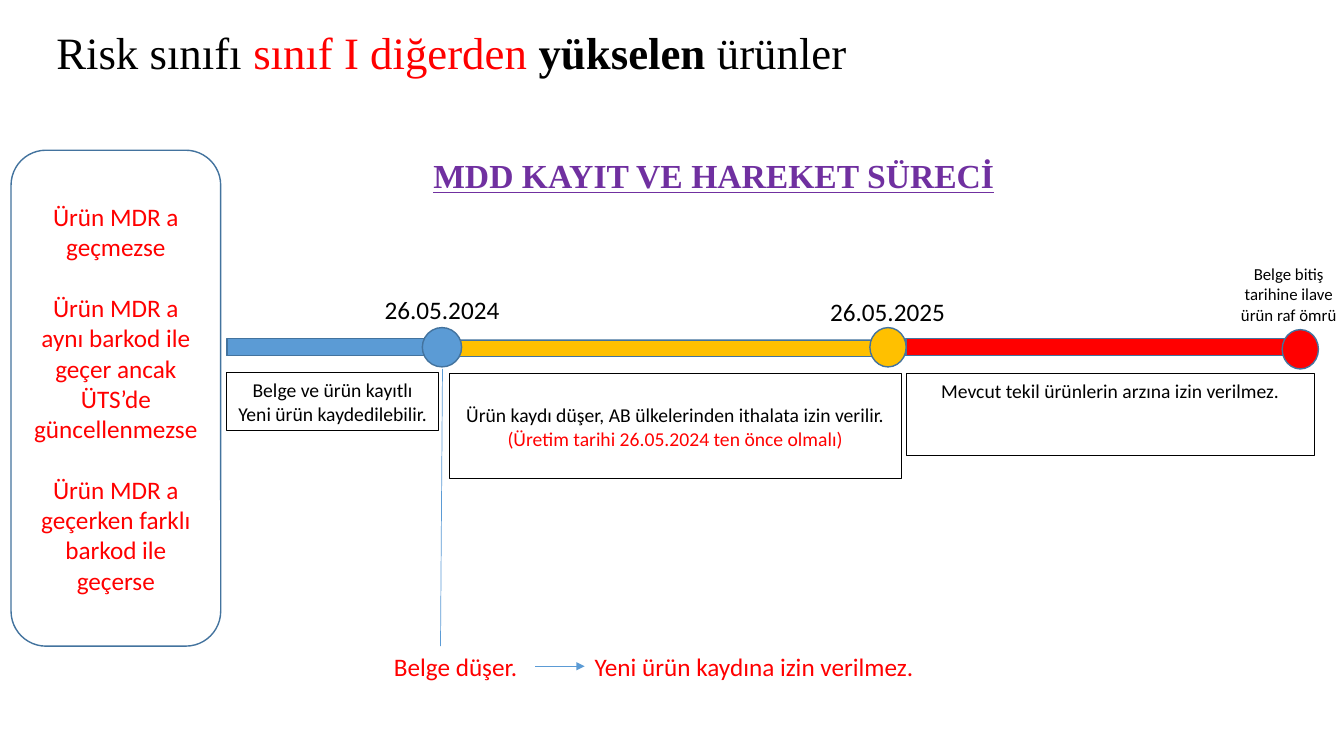
"""Builds the MDD registration timeline slide."""
from dataclasses import dataclass

from lxml import etree
from pptx import Presentation
from pptx import util as u
from pptx.dml.color import RGBColor
from pptx.enum import shapes, text
from pptx.oxml import ns


@dataclass(frozen=True)
class Theme:
    """Colours, fonts and type sizes of the slide."""
    white: str = "FFFFFF"
    black: str = "000000"
    red: str = "FF0000"
    blue: str = "5B9BD5"
    amber: str = "FFC000"
    purple: str = "7030A0"
    outline: str = "43739E"
    body_font: str = "Calibri"
    title_font: str = "Times New Roman"
    title: int = 32
    heading: int = 24
    body: int = 18
    box: int = 14
    note: int = 12


THEME = Theme()
COLUMNS, ROWS = 160, 90
CENTER, LEFT = text.PP_ALIGN.CENTER, text.PP_ALIGN.LEFT
TOP, MIDDLE = text.MSO_ANCHOR.TOP, text.MSO_ANCHOR.MIDDLE
KIND = shapes.MSO_SHAPE


def write(frame, paragraphs, size=THEME.body, color=THEME.black, font=THEME.body_font,
          align=CENTER, anchor=TOP, wrap=True, gap=0, spacing=None, bold=False, underline=False):
    """Fill a text frame; each paragraph is a string or a list of (text, changes) runs."""
    frame.word_wrap, frame.vertical_anchor = wrap, anchor
    for index, content in enumerate(paragraphs):
        paragraph = frame.add_paragraph() if index else frame.paragraphs[0]
        paragraph.alignment = align
        if spacing:
            paragraph.line_spacing = spacing
        if index and gap:
            paragraph.space_before = u.Pt(gap)
        for words, changes in [(content, {})] if isinstance(content, str) else content:
            run = paragraph.add_run()
            run.text = words
            run.font.size, run.font.name = u.Pt(size), font
            run.font.bold = changes.get("bold", bold)
            run.font.underline = underline
            run.font.color.rgb = RGBColor.from_string(changes.get("color", color))


class TimelineSlide:
    """Holds the theme, the grid and the current slide."""

    def __init__(self, deck, theme):
        """Add a blank slide and measure its grid."""
        self.theme = theme
        self.column, self.row = deck.slide_width / COLUMNS, deck.slide_height / ROWS
        self.slide = deck.slides.add_slide(deck.slide_layouts[6])

    def place(self, *lengths):
        """Turn alternating columns and rows into slide lengths."""
        return [round(n * (self.row if i % 2 else self.column)) for i, n in enumerate(lengths)]

    def shape(self, kind, at, fill=None, line=None, width=1):
        """Add a preset shape with a plain outline."""
        item = self.slide.shapes.add_shape(kind, *self.place(*at))
        item.shadow.inherit = False
        if fill:
            item.fill.solid()
            item.fill.fore_color.rgb = RGBColor.from_string(fill)
        else:
            item.fill.background()
        item.line.color.rgb = RGBColor.from_string(line or self.theme.outline)
        item.line.width = u.Pt(width)
        return item

    def label(self, at, *paragraphs, **style):
        """Add free-standing text."""
        item = self.slide.shapes.add_textbox(*self.place(*at))
        write(item.text_frame, paragraphs, **style)
        return item

    def box(self, at, *paragraphs, inset=0.05):
        """Add an outlined explanation box."""
        item = self.shape(KIND.RECTANGLE, at, line=self.theme.black, width=0.75)
        item.text_frame.margin_top = u.Inches(inset)
        write(item.text_frame, paragraphs, size=self.theme.box)

    def connector(self, ends, arrow=False):
        """Add a thin line, with an arrowhead if asked."""
        item = self.slide.shapes.add_connector(shapes.MSO_CONNECTOR.STRAIGHT, *self.place(*ends))
        item.line.color.rgb = RGBColor.from_string(self.theme.blue)
        item.line.width = u.Pt(0.5)
        if arrow:
            etree.SubElement(item.line._get_or_add_ln(), ns.qn("a:tailEnd"), type="triangle")
        etree.SubElement(item._element.spPr, ns.qn("a:effectLst"))
        return item


def main():
    """Build and save the slide."""
    deck = Presentation()
    deck.slide_width, deck.slide_height = u.Inches(13.33), u.Inches(7.5)
    page = TimelineSlide(deck, THEME)
    red = {"color": THEME.red}

    page.label((5.52, 1.56, 138, 10.08),
               [("Risk sınıfı ", {}), ("sınıf I diğerden ", red),
                ("yükselen ", {"bold": True}), ("ürünler", {})],
               size=THEME.title, font=THEME.title_font, align=LEFT, anchor=MIDDLE, spacing=0.9)
    page.label((50.4, 17.88, 69.84, 6), "MDD KAYIT VE HAREKET SÜRECİ",
               size=THEME.heading, font=THEME.title_font, color=THEME.purple,
               align=LEFT, wrap=False, bold=True, underline=True)

    conditions = page.shape(KIND.ROUNDED_RECTANGLE, (1.32, 17.88, 24.96, 59.04), THEME.white)
    write(conditions.text_frame,
          ["Ürün MDR a geçmezse",
           "Ürün MDR a aynı barkod ile geçer ancak ÜTS’de güncellenmezse",
           "Ürün MDR a geçerken farklı barkod ile geçerse"],
          color=THEME.red, anchor=MIDDLE, gap=22)

    page.shape(KIND.RIGHT_ARROW, (27, 39.6, 128.76, 3.6), THEME.white)
    stages = [
        (THEME.blue, (27, 40.32, 24.36, 2.04), (50.28, 39, 4.68, 4.68)),
        (THEME.amber, (54.24, 40.56, 50.88, 1.92), (103.56, 39, 4.32, 4.68)),
        (THEME.red, (107.88, 40.32, 48.6, 2.04), (152.64, 39.24, 4.32, 4.68)),
    ]
    for color, bar, _ in stages:
        page.shape(KIND.RECTANGLE, bar, color)
    for color, _, milestone in stages:
        page.shape(KIND.OVAL, milestone, color)

    page.label((39.72, 34.44, 25.8, 4.8), "26.05.2024")
    page.label((96.48, 34.68, 18.36, 4.8), "26.05.2025")
    page.label((145.8, 30.84, 15.24, 8.52), "Belge bitiş tarihine ilave ürün raf ömrü",
               size=THEME.note)

    page.box((27, 44.4, 25.2, 6.84), "Belge ve ürün kayıtlı", "Yeni ürün kaydedilebilir.")
    page.box((53.52, 44.52, 53.76, 12.48),
             "Ürün kaydı düşer, AB ülkelerinden ithalata izin verilir.",
             [("(Üretim tarihi 26.05.2024 ten önce olmalı)", red)], inset=0.29)
    page.box((107.88, 44.52, 48.6, 9.72), "Mevcut tekil ürünlerin arzına izin verilmez.")

    page.connector((52.44, 76.92, 52.68, 43.92))
    expiry = page.label((45.72, 76.92, 18, 4.8), "Belge düşer.",
                        color=THEME.red, align=LEFT, wrap=False)
    consequence = page.label((69.6, 76.92, 53.88, 4.8), "Yeni ürün kaydına izin verilmez.",
                             color=THEME.red, align=LEFT)
    result = page.connector((63.72, 79.32, 69.6, 79.32), arrow=True)
    result.begin_connect(expiry, 3)
    result.end_connect(consequence, 1)

    deck.save("out.pptx")


if __name__ == "__main__":
    main()
